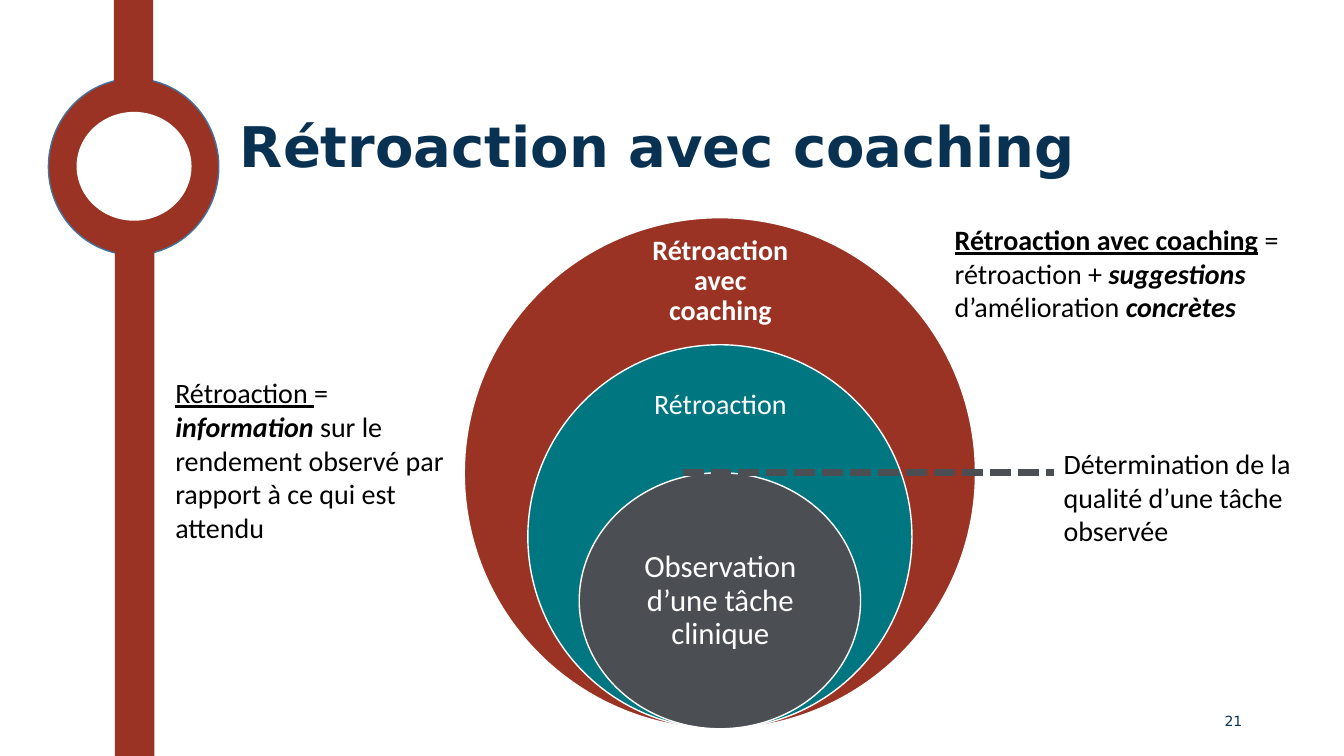
from dataclasses import dataclass

from lxml.etree import SubElement
from pptx import Presentation
from pptx.dml.color import RGBColor
from pptx.enum.dml import MSO_LINE
from pptx.enum.shapes import MSO_CONNECTOR, MSO_SHAPE
from pptx.enum.text import MSO_ANCHOR, MSO_AUTO_SIZE, PP_ALIGN
from pptx.oxml.ns import qn
from pptx.util import Inches, Pt


@dataclass(frozen=True)
class Theme:
    """Colours, fonts and type sizes of the slide."""
    red: str = "9A3324"
    teal: str = "007680"
    gray: str = "4B4F54"
    navy: str = "093152"
    ring: str = "43739E"
    white: str = "FFFFFF"
    black: str = "000000"
    heading_font: str = "DejaVu Sans"
    body_font: str = "Calibri"
    title_size: int = 40
    core_size: int = 22
    body_size: int = 20
    number_size: int = 10


THEME = Theme()


def color(value):
    """Return an RGB colour from its hexadecimal value."""
    return RGBColor.from_string(value)


def style_run(run, name, size, hue, style=""):
    """Format a run; the style letters are b, i and u."""
    font = run.font
    font.name, font.size = name, Pt(size)
    font.color.rgb = color(hue)
    font.bold, font.italic, font.underline = (letter in style for letter in "biu")


def add_title(slide, text):
    """Place and format the title placeholder."""
    title = slide.shapes.title
    title.left, title.top = Inches(2.28), Inches(0.81)
    title.width, title.height = Inches(10.9), Inches(1.35)
    frame = title.text_frame
    frame.text = text
    frame.word_wrap = True
    frame.auto_size = MSO_AUTO_SIZE.NONE
    frame.vertical_anchor = MSO_ANCHOR.MIDDLE
    paragraph = frame.paragraphs[0]
    paragraph.alignment, paragraph.line_spacing = PP_ALIGN.LEFT, 0.9
    style_run(paragraph.runs[0], THEME.heading_font, THEME.title_size, THEME.navy, "b")


def add_figure(slide, kind, box, fill, outline=None):
    """Add a filled preset shape with an optional thin outline."""
    shape = slide.shapes.add_shape(kind, *map(Inches, box))
    shape.shadow.inherit = False
    shape.fill.solid()
    shape.fill.fore_color.rgb = color(fill)
    if outline:
        shape.line.color.rgb = color(outline)
        shape.line.width = Pt(1)
    else:
        shape.line.fill.background()


def add_text(slide, box):
    """Add a wrapping text box and return its frame."""
    frame = slide.shapes.add_textbox(*map(Inches, box)).text_frame
    frame.word_wrap = True
    return frame


def add_label(slide, box, text, size, inset, style=""):
    """Add a centred white label on a circle."""
    frame = add_text(slide, box)
    frame.text = text
    frame.vertical_anchor = MSO_ANCHOR.MIDDLE
    frame.margin_left = frame.margin_right = Inches(inset)
    frame.margin_top = frame.margin_bottom = Inches(inset)
    paragraph = frame.paragraphs[0]
    paragraph.alignment, paragraph.line_spacing = PP_ALIGN.CENTER, 0.9
    style_run(paragraph.runs[0], THEME.body_font, size, THEME.white, style)


def add_note(slide, box, pieces):
    """Add an explanation made of (text, style) pieces."""
    frame = add_text(slide, box)
    frame.auto_size = MSO_AUTO_SIZE.SHAPE_TO_FIT_TEXT
    for text, style in pieces:
        run = frame.paragraphs[0].add_run()
        run.text = text
        style_run(run, THEME.body_font, THEME.body_size, THEME.black, style)


def add_dashed_line(slide, start, end, y):
    """Add a thick horizontal dashed line."""
    line = slide.shapes.add_connector(
        MSO_CONNECTOR.STRAIGHT, Inches(start), Inches(y), Inches(end), Inches(y))
    line.line.color.rgb = color(THEME.gray)
    line.line.width = Pt(5)
    line.line.dash_style = MSO_LINE.SQUARE_DOT
    SubElement(line._element.spPr, qn("a:effectLst"))


def add_page_number(slide, number):
    """Add the right-aligned page number."""
    frame = add_text(slide, (9.42, 6.95, 3, 0.4))
    frame.text = number
    frame.vertical_anchor = MSO_ANCHOR.MIDDLE
    paragraph = frame.paragraphs[0]
    paragraph.alignment = PP_ALIGN.RIGHT
    style_run(paragraph.runs[0], THEME.heading_font, THEME.number_size, THEME.navy)


def add_side_band(slide):
    """Draw the vertical band with its ring."""
    add_figure(slide, MSO_SHAPE.OVAL, (0.48, 0.78, 1.69, 1.75), THEME.red, THEME.ring)
    add_figure(slide, MSO_SHAPE.RECTANGLE, (1.14, 2.48, 0.39, 5.02), THEME.red)
    add_figure(slide, MSO_SHAPE.RECTANGLE, (1.13, 0, 0.39, 0.82), THEME.red)
    add_figure(slide, MSO_SHAPE.OVAL, (0.76, 1.11, 1.14, 1.08), THEME.white)


def add_nested_circles(slide):
    """Draw the circles, which share their centre line and bottom."""
    center, bottom = 7.14, 7.23
    circles = (
        (5.07, 5.07, THEME.red, "Rétroaction avec coaching",
         (6.26, 2.41, 1.77, 0.76), THEME.body_size, 0.16, "b"),
        (3.81, 3.81, THEME.teal, "Rétroaction",
         (6.26, 3.67, 1.77, 0.71), THEME.body_size, 0.16, ""),
        (2.79, 2.54, THEME.gray, "Observation d’une tâche clinique",
         (6.16, 5.33, 1.97, 1.27), THEME.core_size, 0.17, ""),
    )
    for width, height, fill, text, label_box, size, inset, style in circles:
        box = (center - width / 2, bottom - height, width, height)
        add_figure(slide, MSO_SHAPE.OVAL, box, fill, THEME.white)
        add_label(slide, label_box, text, size, inset, style)


def main():
    """Build and save the slide."""
    presentation = Presentation()
    presentation.slide_width, presentation.slide_height = Inches(13.33), Inches(7.5)
    slide = presentation.slides.add_slide(presentation.slide_layouts[5])
    add_side_band(slide)
    add_title(slide, "Rétroaction avec coaching")
    add_nested_circles(slide)
    add_dashed_line(slide, 6.77, 10.45, 4.69)
    add_note(slide, (10.45, 4.38, 2.88, 1.1), (
        ("Détermination de la qualité d’une tâche observée", ""),
    ))
    add_note(slide, (1.64, 3.68, 3.03, 1.77), (
        ("Rétroaction ", "u"),
        ("= ", ""),
        ("information", "bi"),
        (" sur le rendement observé par rapport à ce qui est attendu", ""),
    ))
    add_note(slide, (9.37, 2.16, 3.48, 1.11), (
        ("Rétroaction avec coaching", "bu"),
        (" = rétroaction + ", ""),
        ("suggestions", "bi"),
        (" d’amélioration ", ""),
        ("concrètes", "bi"),
    ))
    add_page_number(slide, "21")
    presentation.save("out.pptx")


if __name__ == "__main__":
    main()
